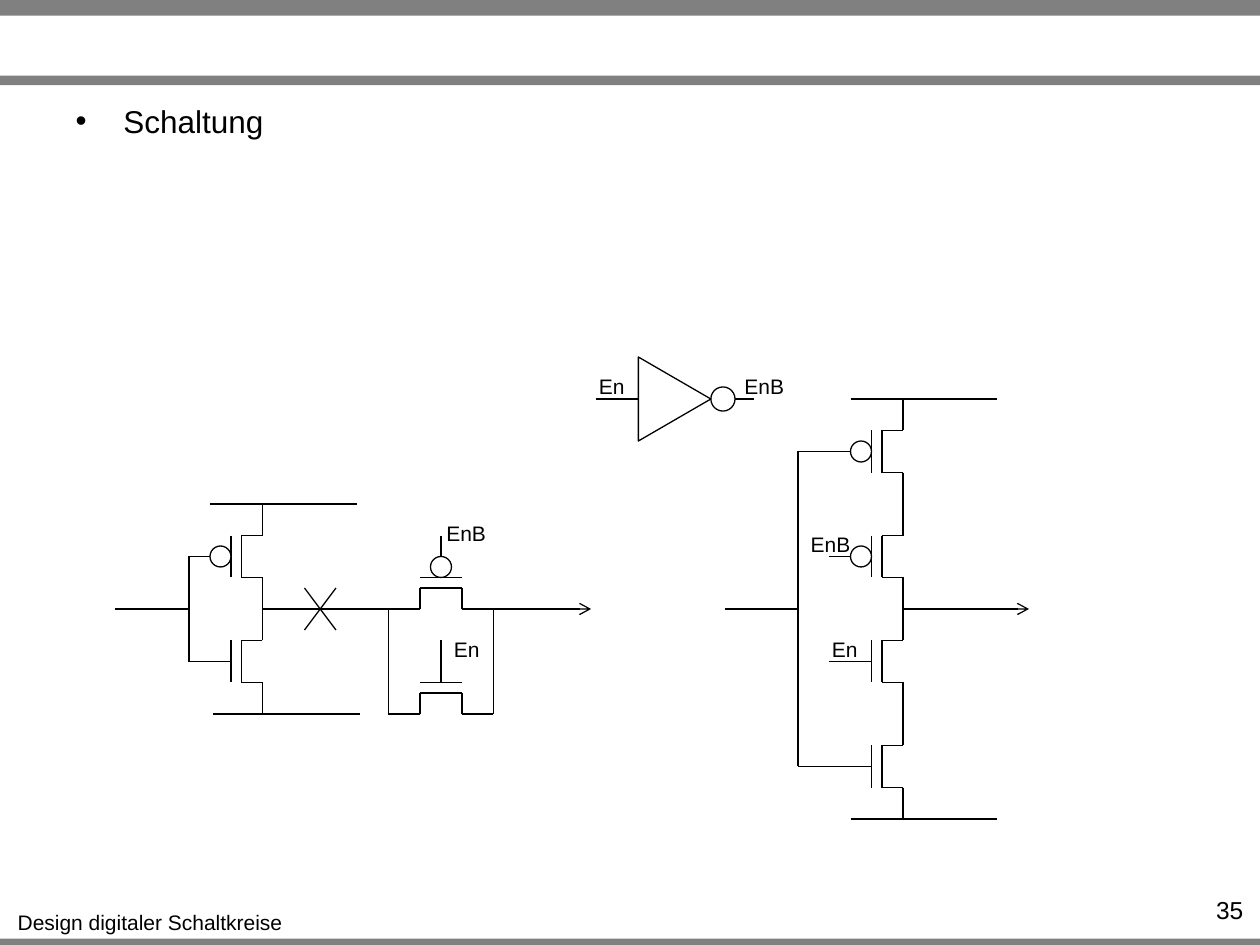
from itertools import pairwise

from lxml import etree
from pptx import Presentation
from pptx import util as u
from pptx.dml.color import RGBColor
from pptx.enum import shapes, text
from pptx.oxml.ns import qn

INK = {"line": "000000", "bar": "808080", "fill": "FFFFFF"}
UNIT = 12  # grid steps per inch
KIND = shapes.MSO_SHAPE
ALIGN = text.PP_ALIGN


def grid(*vals):
    return [u.Inches(v / UNIT) for v in vals]


def hue(name):
    return RGBColor.from_string(INK[name])


class Sheet:
    """Style and slide; all lengths are steps of the 120 x 90 grid."""

    font, width = "Arial", 0.75

    def __init__(self, slide):
        self.slide = slide
        self.items = slide.shapes

    def style(self, para, size, align):
        para.alignment = align
        para.font.name = self.font
        para.font.size = u.Pt(size)
        para.font.color.rgb = hue("line")

    def body(self, words, box, size):
        hold = self.slide.placeholders[1]
        hold.left, hold.top, hold.width, hold.height = grid(*box)
        para = hold.text_frame.paragraphs[0]
        para.text = words
        props = para._p.get_or_add_pPr()
        props.set("marL", str(u.Inches(0.38)))
        props.set("indent", str(u.Inches(-0.38)))
        etree.SubElement(props, qn("a:buChar")).set("char", "•")
        para.space_before = u.Pt(0)
        self.style(para, size, ALIGN.LEFT)

    def label(self, words, x, y, w, h=3.6, size=12, align=ALIGN.CENTER):
        frame = self.items.add_textbox(*grid(x, y, w, h)).text_frame
        frame.word_wrap = align != ALIGN.CENTER
        para = frame.paragraphs[0]
        para.text = words
        self.style(para, size, align)

    def shape(self, kind, box, fill=None, edge=True, turn=0):
        item = self.items.add_shape(kind, *grid(*box))
        item.shadow.inherit = False
        item.rotation = turn
        if fill:
            item.fill.solid()
            item.fill.fore_color.rgb = hue(fill)
        else:
            item.fill.background()
        if edge:
            item.line.color.rgb = hue("line")
            item.line.width = u.Pt(self.width)
        else:
            item.line.fill.background()

    def wire(self, *points, arrow=False):
        """Straight segments through the points."""
        for start, end in pairwise(points):
            item = self.items.add_connector(
                shapes.MSO_CONNECTOR.STRAIGHT, *grid(*start, *end))
            item.line.color.rgb = hue("line")
            item.line.width = u.Pt(self.width)
            if arrow:
                tail = etree.SubElement(item.line._get_or_add_ln(), qn("a:tailEnd"))
                tail.set("type", "arrow")
            etree.SubElement(item._element.spPr, qn("a:effectLst"))

    def fet(self, x, y, ptype=False, flat=False):
        """Transistor whose channel is centred at (x, y), gate left or up."""
        def spot(along, away):
            return (x + along, y - away) if flat else (x - away, y + along)

        self.wire(*(spot(*p) for p in
                    [(-5, 0), (-2, 0), (-2, 2), (2, 2), (2, 0), (5, 0)]))
        self.wire(spot(-2, 3), spot(2, 3))
        self.wire(spot(0, 7), spot(0, 5), spot(0, 3))
        if ptype:
            cx, cy = spot(0, 4)
            self.shape(KIND.OVAL, (cx - 1, cy - 1, 2, 2), "fill")

    def rail(self, x, y):
        self.wire((x, y), (x + 14, y))

    def inverter(self, x, y):
        """Inverter whose input wire starts at (x, y)."""
        self.wire((x + 10.9, y), (x + 15, y))
        self.shape(KIND.OVAL, (x + 10.9, y - 1.15, 2.3, 2.3), "fill")
        self.shape(KIND.ISOSCELES_TRIANGLE, (x + 3.45, y - 3.45, 8, 6.9), turn=90)
        self.wire((x, y), (x + 4, y))


def main():
    deck = Presentation()
    deck.slide_width, deck.slide_height = u.Inches(10), u.Inches(7.5)
    slide = deck.slides.add_slide(deck.slide_layouts[1])
    title = slide.shapes.title._element
    title.getparent().remove(title)
    sheet = Sheet(slide)

    # Frame bars, footer, list and page number
    for top, high in ((89.4, 0.9), (0, 1.5), (7.2, 0.9)):
        sheet.shape(KIND.RECTANGLE, (0, top, 120, high), "bar", edge=False)
    sheet.label("Design digitaler Schaltkreise", 0.4, 86, 27.8)
    sheet.body("Schaltung", (6, 9.1, 108, 8.9), 18)
    sheet.label("35", 109.2, 84.7, 10.4, 2.9, 14, ALIGN.RIGHT)

    # Left: inverter with cut output
    sheet.rail(20, 48)
    sheet.rail(20.3, 68)
    sheet.fet(25, 53, ptype=True)
    sheet.fet(25, 63)
    sheet.wire((11, 58), (18, 58))
    sheet.wire((18, 53), (18, 63))
    sheet.wire((25, 58), (37, 58))
    sheet.wire((29, 56), (32, 60))
    sheet.wire((32, 56), (29, 60))

    # Left: transmission gate
    sheet.fet(42, 58, ptype=True, flat=True)
    sheet.fet(42, 68, flat=True)
    for x in (37, 47):
        sheet.wire((x, 58), (x, 68))
    sheet.wire((44.3, 58), (56.3, 58), arrow=True)

    # Right: tristate stack
    for y in (38, 78):
        sheet.rail(81, y)
    for row in range(4):
        sheet.fet(86, 43 + 10 * row, ptype=row < 2)
    sheet.wire((79, 43), (76, 43), (76, 73), (79, 73))
    sheet.wire((69, 58), (76, 58))
    sheet.wire((86, 58), (98, 58), arrow=True)

    # Enable inverter and signal names
    sheet.inverter(56.8, 38)
    for x, y in ((41.3, 49), (76, 50), (69.7, 35)):
        sheet.label("EnB", x, y, 6.2)
    for x, y in ((42, 60), (78, 60), (55.8, 35)):
        sheet.label("En", x, y, 4.9)

    deck.save("out.pptx")


if __name__ == "__main__":
    main()
